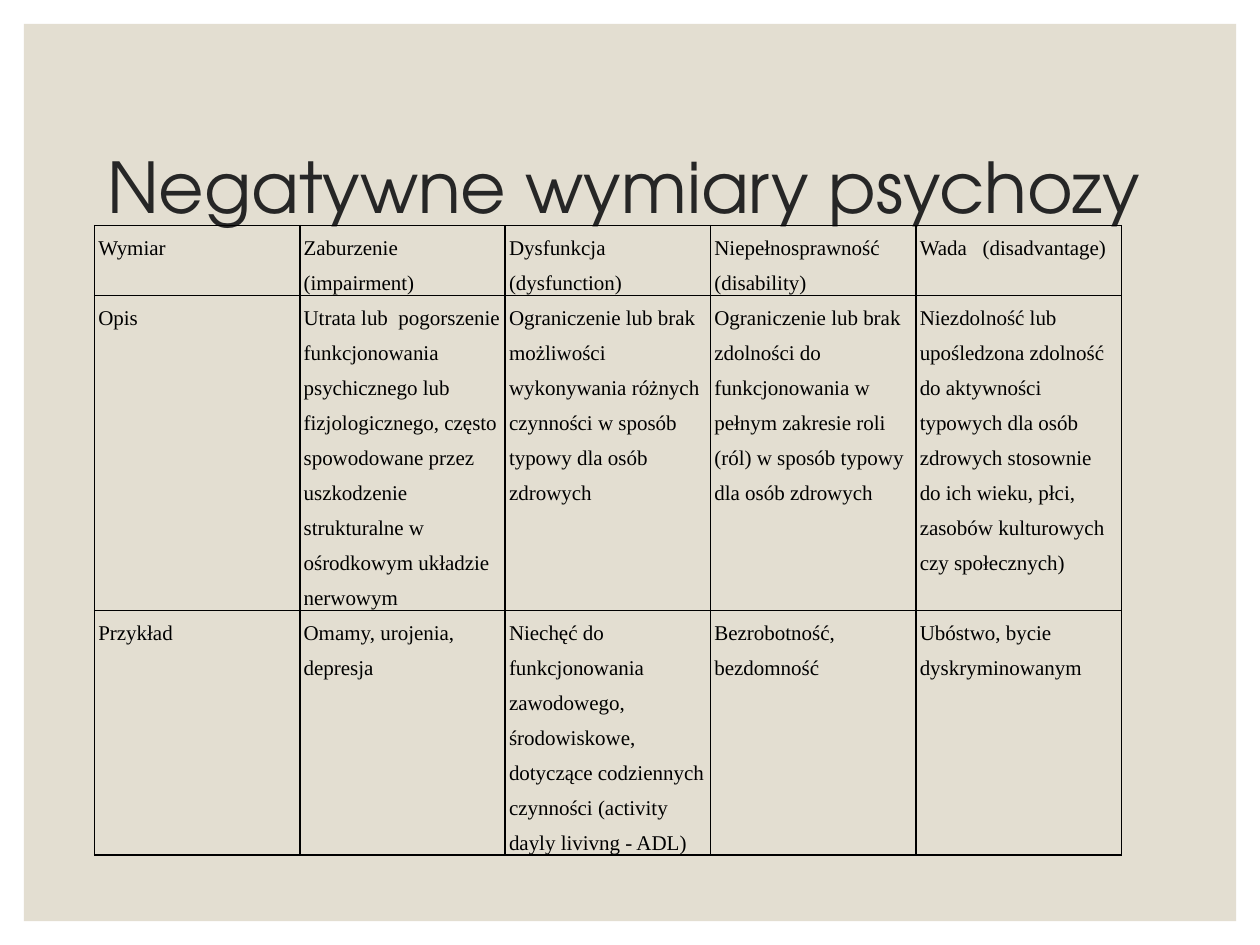
from lxml import etree
from pptx import Presentation
from pptx.dml.color import RGBColor
from pptx.enum.shapes import MSO_SHAPE
from pptx.enum.text import MSO_ANCHOR, PP_ALIGN
from pptx.oxml.ns import qn
from pptx.util import Inches, Pt

RECTANGLE = MSO_SHAPE.RECTANGLE
TOP, MIDDLE = MSO_ANCHOR.TOP, MSO_ANCHOR.MIDDLE
LEFT = PP_ALIGN.LEFT

BEIGE = RGBColor(0xE3, 0xDE, 0xD1)
CHARCOAL = RGBColor(0x26, 0x26, 0x26)
BLACK = RGBColor(0, 0, 0)

TITLE_FONT = {"name": "TeX Gyre Adventor", "size": Pt(40), "bold": False}
CELL_FONT = {"name": "Times New Roman", "size": Pt(12), "bold": False}
CELL_FORMAT = {
    "margin_left": Inches(0.03),
    "margin_right": Inches(0.03),
    "margin_top": 0,
    "margin_bottom": 0,
    "vertical_anchor": TOP,
}

COLUMN_WIDTH = 1.63
ROW_HEIGHTS = [0.53, 2.29, 1.84]
ROWS = [
    [
        "Wymiar",
        "Zaburzenie (impairment)",
        "Dysfunkcja (dysfunction)",
        "Niepełnosprawność (disability)",
        "Wada   (disadvantage)",
    ],
    [
        "Opis",
        "Utrata lub  pogorszenie funkcjonowania psychicznego lub fizjologicznego, "
        "często spowodowane przez uszkodzenie strukturalne w ośrodkowym układzie "
        "nerwowym",
        "Ograniczenie lub brak możliwości wykonywania różnych czynności w sposób "
        "typowy dla osób zdrowych",
        "Ograniczenie lub brak zdolności do funkcjonowania w pełnym zakresie roli "
        "(ról) w sposób typowy dla osób zdrowych",
        "Niezdolność lub upośledzona zdolność do aktywności typowych dla osób "
        "zdrowych stosownie do ich wieku, płci, zasobów kulturowych czy "
        "społecznych)",
    ],
    [
        "Przykład",
        "Omamy, urojenia, depresja",
        "Niechęć do funkcjonowania zawodowego, środowiskowe, dotyczące codziennych "
        "czynności (activity dayly livivng - ADL)",
        "Bezrobotność, bezdomność",
        "Ubóstwo, bycie dyskryminowanym",
    ],
]


def set_attributes(obj, values):
    for name, value in values.items():
        setattr(obj, name, value)


def write_text(tf, text, font, color, line_spacing):
    p = tf.paragraphs[0]
    p.alignment = LEFT
    p.line_spacing = line_spacing
    r = p.add_run()
    r.text = text
    set_attributes(r.font, font)
    r.font.color.rgb = color


def add_panel(s):
    """Add the beige panel behind everything else on the slide."""
    sp = s.shapes.add_shape(
        RECTANGLE, Inches(0.19), Inches(0.19), Inches(9.62), Inches(7.12)
    )
    sp.shadow.inherit = False
    sp.fill.solid()
    sp.fill.fore_color.rgb = BEIGE
    sp.line.fill.background()
    s.shapes._spTree.insert(2, sp._element)


def set_title(s, text):
    sp = s.shapes.title
    set_attributes(sp, {
        "left": Inches(0.75),
        "top": Inches(0.86),
        "width": Inches(8.5),
        "height": Inches(1.31),
    })
    sp.text_frame.vertical_anchor = MIDDLE
    write_text(sp.text_frame, text, TITLE_FONT, CHARCOAL, 0.9)


def set_borders(cell, color, width):
    tc_pr = cell._tc.get_or_add_tcPr()
    for i, side in enumerate(("lnL", "lnR", "lnT", "lnB")):
        ln = etree.Element(qn(f"a:{side}"), w=str(width))
        fill = etree.SubElement(ln, qn("a:solidFill"))
        etree.SubElement(fill, qn("a:srgbClr"), val=str(color))
        tc_pr.insert(i, ln)


def add_grid(s, rows):
    column_count = len(rows[0])
    frame = s.shapes.add_table(
        len(rows), column_count, Inches(0.75), Inches(1.79),
        Inches(COLUMN_WIDTH * column_count), Inches(sum(ROW_HEIGHTS)),
    )
    table = frame.table
    set_attributes(table, {"first_row": False, "horz_banding": False})
    for column in table.columns:
        column.width = Inches(COLUMN_WIDTH)
    for row, height, texts in zip(table.rows, ROW_HEIGHTS, rows):
        row.height = Inches(height)
        for cell, text in zip(row.cells, texts):
            set_attributes(cell, CELL_FORMAT)
            cell.fill.background()
            set_borders(cell, BLACK, Pt(1))
            write_text(cell.text_frame, text, CELL_FONT, BLACK, 1.5)


def main():
    prs = Presentation()
    prs.slide_width, prs.slide_height = Inches(10), Inches(7.5)
    s = prs.slides.add_slide(prs.slide_layouts[5])
    add_panel(s)
    set_title(s, "Negatywne wymiary psychozy")
    add_grid(s, ROWS)
    prs.save("out.pptx")


if __name__ == "__main__":
    main()
